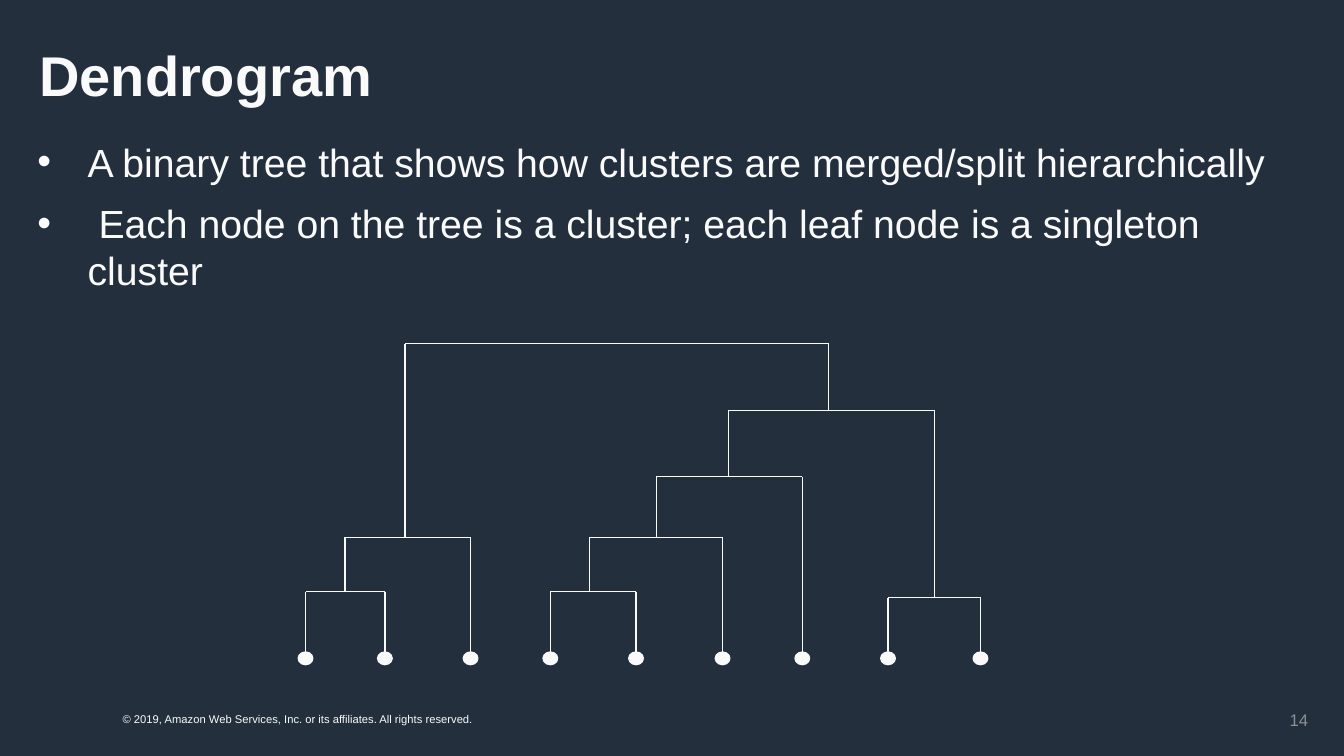
from dataclasses import dataclass

from lxml import etree
from pptx import Presentation
from pptx import util as u
from pptx.dml.color import RGBColor
from pptx.enum import shapes, text
from pptx.oxml import ns

NAVY = RGBColor(0x23, 0x2F, 0x3D)
WHITE = RGBColor(0xFA, 0xFA, 0xFA)
GREY = RGBColor(0x8D, 0x8F, 0x92)
FONT = "Arial"
LEAF_Y = 16.59
DOT_WIDTH, DOT_HEIGHT = 0.33, 0.28


@dataclass(frozen=True)
class Node:
    x: float
    y: float


@dataclass(frozen=True)
class Merge:
    left: Node
    right: Node
    y: float
    stem_x: float

    @property
    def node(self) -> Node:
        return Node(self.stem_x, self.y)


@dataclass(frozen=True)
class Label:
    words: str
    left: float
    top: float
    width: float
    height: float
    size: int
    color: RGBColor
    align: text.PP_ALIGN
    anchor: text.MSO_ANCHOR


def style(paragraph, size: int, color: RGBColor, bold: bool = False) -> None:
    font = paragraph.font
    font.name = FONT
    font.size = u.Pt(size)
    font.bold = bold
    font.color.rgb = color


def place(shape, left: float, top: float, width: float, height: float) -> None:
    shape.left, shape.top = u.Cm(left), u.Cm(top)
    shape.width, shape.height = u.Cm(width), u.Cm(height)


def draw_title(slide, words: str) -> None:
    title = slide.shapes.title
    place(title, 0.74, 1.14, 32.49, 1.65)
    frame = title.text_frame
    frame.text = words
    frame.word_wrap = True
    frame.auto_size = text.MSO_AUTO_SIZE.NONE
    frame.vertical_anchor = text.MSO_ANCHOR.MIDDLE
    heading = frame.paragraphs[0]
    heading.alignment = text.PP_ALIGN.LEFT
    heading.line_spacing = 0.9
    style(heading, 40, WHITE, bold=True)


def draw_bullets(slide, points: list[str]) -> None:
    body = slide.shapes.add_textbox(u.Cm(0.69), u.Cm(3.35), u.Cm(32.49), u.Cm(13.92))
    frame = body.text_frame
    frame.word_wrap = True
    for index, point in enumerate(points):
        paragraph = frame.add_paragraph() if index else frame.paragraphs[0]
        paragraph.text = point
        properties = paragraph._p.get_or_add_pPr()
        properties.set("marL", str(u.Cm(1.27)))
        properties.set("indent", str(-u.Cm(1.27)))
        etree.SubElement(properties, ns.qn("a:buFont"), typeface=FONT)
        etree.SubElement(properties, ns.qn("a:buChar"), char="•")
        if index:
            paragraph.space_before = u.Pt(10)
        style(paragraph, 28, WHITE)


def draw_label(slide, label: Label) -> None:
    box = slide.shapes.add_textbox(
        u.Cm(label.left), u.Cm(label.top), u.Cm(label.width), u.Cm(label.height)
    )
    frame = box.text_frame
    frame.text = label.words
    frame.word_wrap = True
    frame.vertical_anchor = label.anchor
    frame.paragraphs[0].alignment = label.align
    style(frame.paragraphs[0], label.size, label.color)


def draw_branch(slide, start: Node, end: Node) -> None:
    branch = slide.shapes.add_connector(
        shapes.MSO_CONNECTOR.STRAIGHT,
        u.Cm(start.x), u.Cm(start.y), u.Cm(end.x), u.Cm(end.y),
    )
    branch.line.color.rgb = WHITE
    branch.line.width = u.Pt(1)
    etree.SubElement(branch._element.spPr, ns.qn("a:effectLst"))


def draw_merge(slide, merge: Merge) -> None:
    left_corner = Node(merge.left.x, merge.y)
    right_corner = Node(merge.right.x, merge.y)
    draw_branch(slide, left_corner, merge.left)
    draw_branch(slide, left_corner, right_corner)
    draw_branch(slide, right_corner, merge.right)


def draw_leaf(slide, leaf: Node) -> None:
    dot = slide.shapes.add_shape(
        shapes.MSO_SHAPE.OVAL,
        u.Cm(leaf.x - DOT_WIDTH / 2), u.Cm(leaf.y - DOT_HEIGHT / 2),
        u.Cm(DOT_WIDTH), u.Cm(DOT_HEIGHT),
    )
    dot.shadow.inherit = False
    dot.fill.solid()
    dot.fill.fore_color.rgb = WHITE
    dot.line.color.rgb = WHITE
    dot.line.width = u.Pt(2)


def draw_dendrogram(slide) -> None:
    leaf_xs = [7.7, 9.7, 11.86, 13.87, 16.03, 18.21, 20.22, 22.38, 24.71]
    leaves = [Node(x, LEAF_Y) for x in leaf_xs]

    first_pair = Merge(leaves[0], leaves[1], 14.91, 8.69)
    first_trio = Merge(first_pair.node, leaves[2], 13.54, 10.21)
    middle_pair = Merge(leaves[3], leaves[4], 14.91, 14.86)
    middle_trio = Merge(middle_pair.node, leaves[5], 13.54, 16.54)
    middle_four = Merge(middle_trio.node, leaves[6], 12.01, 18.36)
    last_pair = Merge(leaves[7], leaves[8], 15.06, 23.55)
    right_six = Merge(middle_four.node, last_pair.node, 10.34, 20.88)
    root = Merge(first_trio.node, right_six.node, 8.66, 15.55)

    for merge in (first_pair, first_trio, middle_pair, middle_trio,
                  middle_four, last_pair, right_six, root):
        draw_merge(slide, merge)
    for leaf in leaves:
        draw_leaf(slide, leaf)


def main() -> None:
    deck = Presentation()
    deck.slide_width, deck.slide_height = u.Cm(33.87), u.Cm(19.05)
    slide = deck.slides.add_slide(deck.slide_layouts.get_by_name("Title Only"))
    slide.background.fill.solid()
    slide.background.fill.fore_color.rgb = NAVY

    draw_label(slide, Label(
        "© 2019, Amazon Web Services, Inc. or its affiliates. All rights reserved.",
        2.84, 17.83, 21.18, 0.61, 8, WHITE, text.PP_ALIGN.LEFT, text.MSO_ANCHOR.TOP,
    ))
    draw_title(slide, "Dendrogram")
    draw_bullets(slide, [
        "A binary tree that shows how clusters are merged/split hierarchically",
        " Each node on the tree is a cluster; each leaf node is a singleton cluster",
    ])
    draw_label(slide, Label(
        "14", 25.6, 17.63, 7.62, 1.02, 12, GREY,
        text.PP_ALIGN.RIGHT, text.MSO_ANCHOR.MIDDLE,
    ))
    draw_dendrogram(slide)
    deck.save("out.pptx")


if __name__ == "__main__":
    main()
